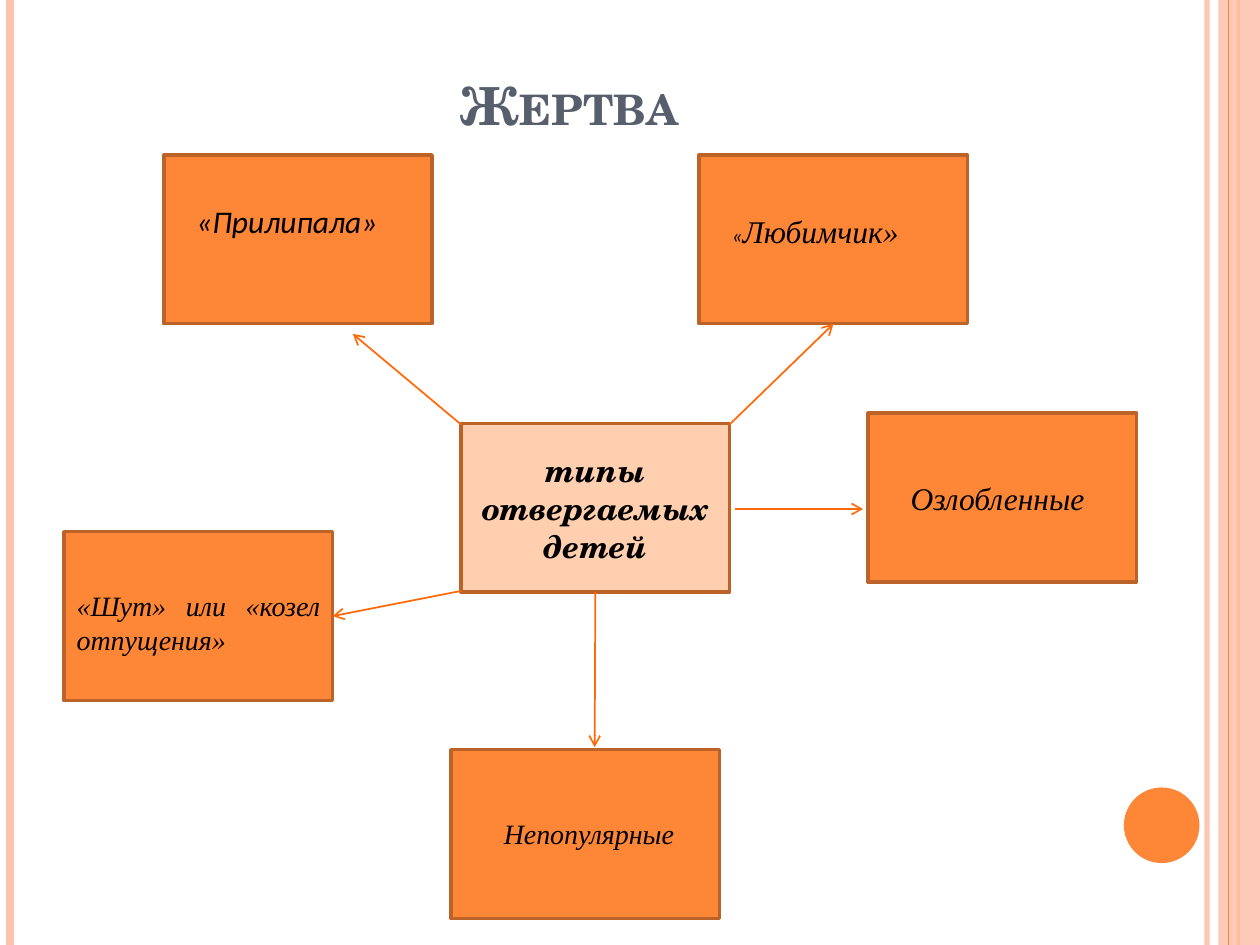
from lxml import etree
from pptx import Presentation
from pptx.dml.color import RGBColor
from pptx.enum import shapes, text
from pptx.oxml.ns import qn
from pptx.util import Inches, Pt

ORANGE, PEACH, PINK = "FE8637", "FFCFAF", "FEC3AE"
BORDER, ARROW, BLACK = "BC6329", "FF6B0A", "000000"
SERIF, HEADING, SANS = "Times New Roman", "TeX Gyre Schola", "Calibri"
BOX_WIDTH, BOX_HEIGHT = 2.13, 1.34


def color(value):
    return RGBColor.from_string(value)


def set_opacity(fill_parent, percent):
    """Make the solid fill found below the given element partly transparent."""
    rgb = fill_parent.find(qn("a:solidFill")).find(qn("a:srgbClr"))
    etree.SubElement(rgb, qn("a:alpha")).set("val", str(percent * 1000))


def format_run(run, font, size, fill=BLACK, bold=False, italic=True):
    run.font.name = font
    run.font.size = Pt(size)
    run.font.bold = bold
    run.font.italic = italic
    run.font.color.rgb = color(fill)


def add_shape(slide, kind, left, top, width, height, fill, border=None):
    shape = slide.shapes.add_shape(
        kind, Inches(left), Inches(top), Inches(width), Inches(height))
    shape.shadow.inherit = False
    shape.fill.solid()
    shape.fill.fore_color.rgb = color(fill)
    if border:
        shape.line.color.rgb = color(border)
        shape.line.width = Pt(2)
    else:
        shape.line.fill.background()
    return shape


def add_box(slide, left, top, fill=ORANGE):
    return add_shape(slide, shapes.MSO_SHAPE.RECTANGLE, left, top,
                     BOX_WIDTH, BOX_HEIGHT, fill, BORDER)


def add_line(slide, start, end, stroke, width):
    line = slide.shapes.add_connector(
        shapes.MSO_CONNECTOR.STRAIGHT, *map(Inches, start + end))
    line.line.color.rgb = color(stroke)
    line.line.width = Pt(width)
    etree.SubElement(line._element.spPr, qn("a:effectLst"))
    return line


def add_arrow(slide, start, end):
    arrow = add_line(slide, start, end, ARROW, 1)
    etree.SubElement(arrow.line._get_or_add_ln(), qn("a:tailEnd")).set("type", "arrow")
    return arrow


def add_label(slide, left, top, width, height, runs):
    """Add a justified caption; runs are (text, font, size)."""
    label = slide.shapes.add_textbox(
        Inches(left), Inches(top), Inches(width), Inches(height))
    frame = label.text_frame
    frame.word_wrap = True
    frame.vertical_anchor = text.MSO_ANCHOR.MIDDLE
    paragraph = frame.paragraphs[0]
    paragraph.alignment = text.PP_ALIGN.JUSTIFY
    for words, font, size in runs:
        run = paragraph.add_run()
        run.text = words
        format_run(run, font, size)


def add_decoration(slide):
    for x, stroke, width, opacity in [(9.58, PINK, 3, 93), (0.08, PINK, 4.5, 100),
                                      (9.83, ORANGE, 1.5, 100)]:
        line = add_line(slide, (x, 0), (x, 7.5), stroke, width)
        if opacity < 100:
            set_opacity(line.line._get_or_add_ln(), opacity)
    band = add_shape(slide, shapes.MSO_SHAPE.RECTANGLE, 9.67, 0, 0.33, 7.5, PINK)
    set_opacity(band._element.spPr, 87)
    add_line(slide, (9.75, 0), (9.75, 7.5), ORANGE, 0.75)
    add_shape(slide, shapes.MSO_SHAPE.OVAL, 8.92, 6.25, 0.6, 0.6, ORANGE)


def set_title(slide, words):
    title = slide.shapes.title
    title.left, title.top = Inches(0.38), Inches(0.44)
    title.width, title.height = Inches(8.28), Inches(0.69)
    frame = title.text_frame
    frame.text = words
    frame.auto_size = text.MSO_AUTO_SIZE.NONE
    frame.vertical_anchor = text.MSO_ANCHOR.BOTTOM
    frame.paragraphs[0].alignment = text.PP_ALIGN.CENTER
    run = frame.paragraphs[0].runs[0]
    format_run(run, HEADING, 30, "575F6D", bold=True, italic=False)
    run.font._element.set("cap", "small")


def add_center(slide, left, top, words):
    center = add_box(slide, left, top, PEACH)
    frame = center.text_frame
    frame.text = words
    frame.word_wrap = True
    frame.vertical_anchor = text.MSO_ANCHOR.MIDDLE
    frame.paragraphs[0].alignment = text.PP_ALIGN.CENTER
    format_run(frame.paragraphs[0].runs[0], HEADING, 18, bold=True)
    return center


def main():
    presentation = Presentation()
    presentation.slide_width, presentation.slide_height = Inches(10), Inches(7.5)
    slide = presentation.slides.add_slide(presentation.slide_layouts[5])
    add_decoration(slide)
    set_title(slide, "Жертва")

    jester = add_box(slide, 0.51, 4.22)
    favourite = add_box(slide, 5.55, 1.23)
    add_box(slide, 6.89, 3.28)
    unpopular = add_box(slide, 3.58, 5.95)
    center = add_center(slide, 3.66, 3.36, "типы отвергаемых детей")
    add_box(slide, 1.3, 1.23)

    add_label(slide, 5.71, 1.63, 1.57, 0.4,
              [("«", SANS, 12), ("Любимчик»", SERIF, 18)])
    add_label(slide, 1.46, 1.55, 2.83, 0.4, [("«Прилипала»", SANS, 18)])
    add_label(slide, 0.51, 4.62, BOX_WIDTH, 0.64,
              [("«Шут» или «козел отпущения»", SERIF, 16)])
    add_label(slide, 7.13, 3.75, 2.4, 0.4, [("Озлобленные", SERIF, 18)])
    add_label(slide, 3.9, 6.43, 1.57, 0.37, [("Непопулярные", SERIF, 16)])

    to_favourite = add_arrow(slide, (5.79, 3.37), (6.57, 2.57))
    to_favourite.end_connect(favourite, 2)
    add_arrow(slide, (3.66, 3.37), (2.8, 2.65))
    add_arrow(slide, (5.83, 4.04), (6.85, 4.04))
    to_unpopular = add_arrow(slide, (4.72, 4.7), (4.72, 5.93))
    to_unpopular.begin_connect(center, 2)
    to_jester = add_arrow(slide, (3.66, 4.69), (2.64, 4.94))
    to_jester.end_connect(jester, 3)

    presentation.save("out.pptx")


if __name__ == "__main__":
    main()
